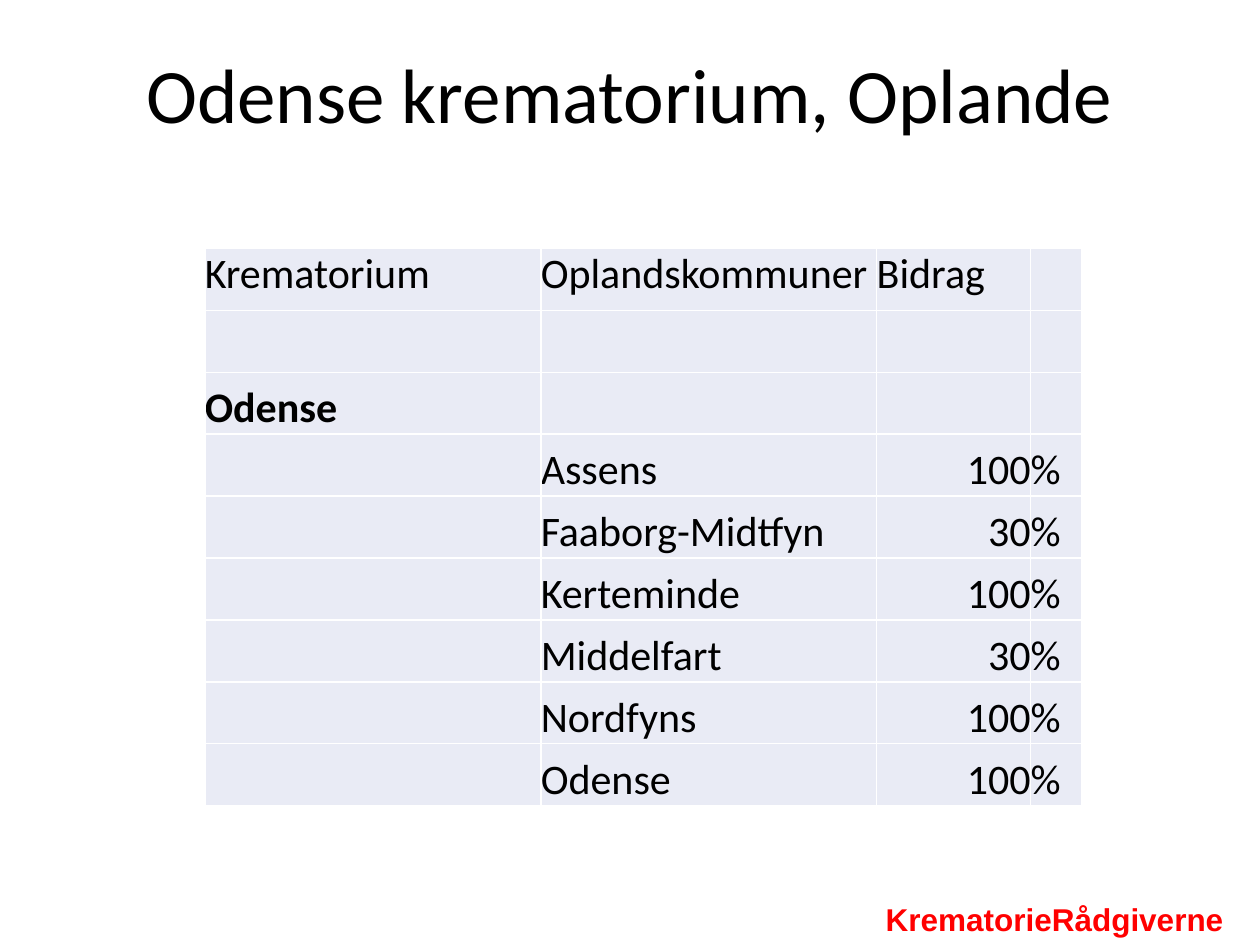
from lxml.etree import SubElement
from pptx import Presentation
from pptx.dml.color import RGBColor as RGB
from pptx.enum.text import MSO_ANCHOR as ANCHOR, MSO_AUTO_SIZE as AUTO_SIZE, PP_ALIGN as ALIGN
from pptx.oxml.ns import qn
from pptx.util import Pt

COLORS = {"text": "000000", "cell": "E9EBF5", "border": "FFFFFF", "footer": "FF0000"}


def set_font(paragraph, color, **values):
    for key, value in values.items():
        setattr(paragraph.font, key, value)
    paragraph.font.color.rgb = RGB.from_string(COLORS[color])


def add_borders(cell):
    properties = cell._tc.get_or_add_tcPr()
    for side in ("lnL", "lnR", "lnT", "lnB"):
        line = SubElement(properties, qn(f"a:{side}"), w=str(Pt(1)))
        fill = SubElement(line, qn("a:solidFill"))
        SubElement(fill, qn("a:srgbClr"), val=COLORS["border"])


prs = Presentation()
prs.slide_width, prs.slide_height = Pt(720), Pt(540)
slide = prs.slides.add_slide(prs.slide_layouts[5])

# Footer
footer = slide.shapes.add_textbox(Pt(499), Pt(511), Pt(221), Pt(29)).text_frame
footer.word_wrap = True
footer.auto_size = AUTO_SIZE.SHAPE_TO_FIT_TEXT
footer.text = "KrematorieRådgiverne"
set_font(footer.paragraphs[0], "footer", name="Arial", size=Pt(18), bold=True)

# Catchment table
contributions = {
    "Assens": 100,
    "Faaborg-Midtfyn": 30,
    "Kerteminde": 100,
    "Middelfart": 30,
    "Nordfyns": 100,
    "Odense": 100,
}
rows = [
    ("Krematorium", "Oplandskommuner", "Bidrag", ""),
    ("", "", "", ""),
    ("Odense", "", "", ""),
    *(("", town, str(share), "%") for town, share in contributions.items()),
]
column_widths = (192, 192, 88, 29)
row_height = 35.4

table = slide.shapes.add_table(
    len(rows), len(column_widths), Pt(117), Pt(142),
    Pt(sum(column_widths)), Pt(row_height * len(rows)),
).table
table.first_row = table.horz_banding = False
for column, width in zip(table.columns, column_widths):
    column.width = Pt(width)

for r, row in enumerate(rows):
    table.rows[r].height = Pt(row_height)
    for c, content in enumerate(row):
        cell = table.cell(r, c)
        add_borders(cell)
        cell.fill.solid()
        cell.fill.fore_color.rgb = RGB.from_string(COLORS["cell"])
        for side in ("left", "right", "top", "bottom"):
            setattr(cell, f"margin_{side}", 0)
        cell.vertical_anchor = ANCHOR.BOTTOM if r else ANCHOR.TOP
        if content:
            cell.text = content
            paragraph = cell.text_frame.paragraphs[0]
            paragraph.alignment = ALIGN.RIGHT if content.isdigit() else ALIGN.LEFT
            set_font(paragraph, "text", name="Calibri", size=Pt(24), bold=(r == 2))

# Title
title = slide.shapes.title
title.left, title.top, title.width, title.height = Pt(50), Pt(29), Pt(620), Pt(104)
title.text_frame.text = "Odense krematorium, Oplande"
title.text_frame.vertical_anchor = ANCHOR.TOP
heading = title.text_frame.paragraphs[0]
heading.alignment = ALIGN.CENTER
heading.line_spacing = 0.9
set_font(heading, "text", name="Calibri", size=Pt(44))

prs.save("out.pptx")
